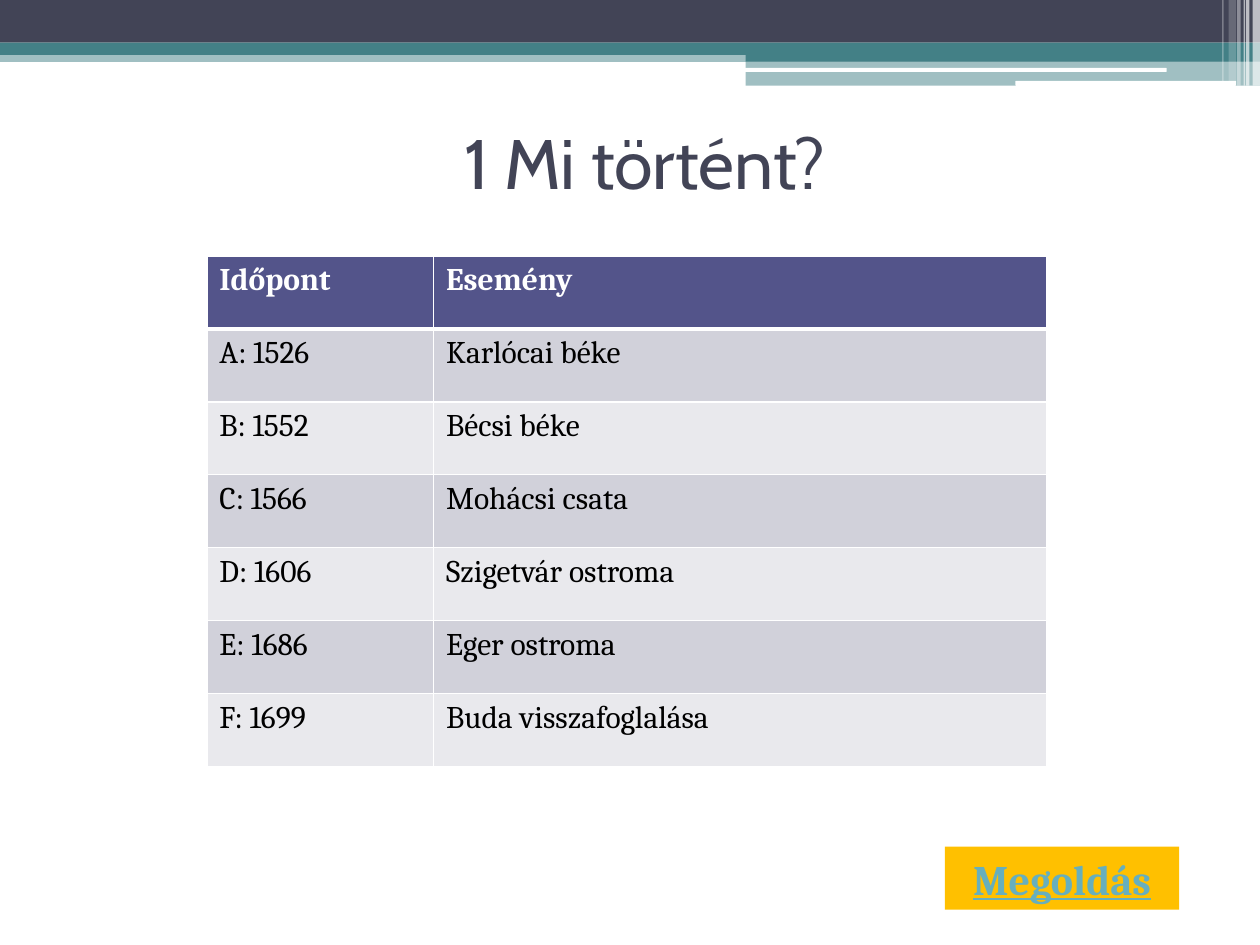
from lxml import etree
from pptx import Presentation
from pptx.dml.color import RGBColor
from pptx.enum.shapes import MSO_SHAPE
from pptx.enum.text import MSO_ANCHOR, PP_ALIGN
from pptx.oxml.ns import qn
from pptx.util import Cm, Pt

RECT, ROUND = MSO_SHAPE.RECTANGLE, MSO_SHAPE.ROUNDED_RECTANGLE
CENTER, LEFT = PP_ALIGN.CENTER, PP_ALIGN.LEFT
MIDDLE = MSO_ANCHOR.MIDDLE

COLORS = {
    "white": "FFFFFF", "black": "000000", "navy": "424456", "teal": "438086",
    "header": "53548A", "odd": "D1D1DA", "even": "E9E9ED",
    "amber": "FFC000", "link": "67AFBD",
}

BANDS = [
    (RECT, (0, 1.02, 25.4, 0.23), "teal", 50),
    (RECT, (0, 0, 25.4, 0.86), "navy", 100),
    (RECT, (0, 0.86, 25.4, 0.25), "teal", 100),
    (RECT, (15.03, 0.99, 10.37, 0.25), "teal", 100),
    (RECT, (15.03, 1.23, 10.37, 0.5), "teal", 50),
    (ROUND, (15.01, 1.37, 8.51, 0.08), "white", 100),
    (ROUND, (20.47, 1.63, 4.45, 0.1), "white", 100),
]

STRIPES = [
    (25.25, 0.15, 1.73, 65), (25.12, 0.07, 1.73, 65), (25.07, 0.03, 1.73, 60),
    (24.94, 0.07, 1.73, 40), (24.77, 0.15, 1.63, 20), (24.64, 0.03, 1.63, 30),
]

ROWS = [
    ("Időpont", "Esemény"),
    ("A: 1526", "Karlócai béke"),
    ("B: 1552", "Bécsi béke"),
    ("C: 1566", "Mohácsi csata"),
    ("D: 1606", "Szigetvár ostroma"),
    ("E: 1686", "Eger ostroma"),
    ("F: 1699", "Buda visszafoglalása"),
]

TITLE = {"name": "Cabin", "size": Pt(40)}
BUTTON = {"name": "Cambria", "size": Pt(24), "bold": True, "underline": True}
HEADER = {"name": "Cambria", "size": Pt(18), "bold": True}
BODY = {"name": "Cambria", "size": Pt(18), "bold": False}


def rgb(color):
    return RGBColor.from_string(COLORS[color])


def write(tf, text, fmt, color, align=LEFT):
    p = tf.paragraphs[0]
    p.alignment = align
    r = p.add_run()
    r.text = text
    for key, value in fmt.items():
        setattr(r.font, key, value)
    r.font.color.rgb = rgb(color)


def add_block(s, kind, box, color, opacity=100):
    sp = s.shapes.add_shape(kind, *map(Cm, box))
    sp.shadow.inherit = False
    sp.line.fill.background()
    sp.fill.solid()
    sp.fill.fore_color.rgb = rgb(color)
    if opacity < 100:
        clr = sp.fill._xPr.find(qn("a:solidFill"))[0]
        etree.SubElement(clr, qn("a:alpha"), val=str(opacity * 1000))
    return sp


def add_title(s, text):
    sp = s.shapes.add_textbox(Cm(1.57), Cm(1.78), Cm(22.86), Cm(2.97))
    tf = sp.text_frame
    tf.word_wrap = True
    tf.vertical_anchor = MIDDLE
    write(tf, text, TITLE, "navy", CENTER)


def add_button(s, text):
    sp = add_block(s, RECT, (19.05, 17.07, 4.72, 1.27), "amber")
    tf = sp.text_frame
    tf.word_wrap = False
    tf.vertical_anchor = MIDDLE
    write(tf, text, BUTTON, "link", CENTER)


def add_borders(cell, bottom):
    tcPr = cell._tc.get_or_add_tcPr()
    for side, width in (("L", 1), ("R", 1), ("T", 1), ("B", bottom)):
        ln = etree.SubElement(tcPr, qn(f"a:ln{side}"), w=str(Pt(width)))
        fill = etree.SubElement(ln, qn("a:solidFill"))
        etree.SubElement(fill, qn("a:srgbClr"), val=COLORS["white"])


def add_events(s):
    widths, height = (4.57, 12.37), 1.47
    box = (4.17, 5.16, sum(widths), height * len(ROWS))
    table = s.shapes.add_table(len(ROWS), len(widths), *map(Cm, box)).table
    for col, width in zip(table.columns, widths):
        col.width = Cm(width)
    for i, texts in enumerate(ROWS):
        table.rows[i].height = Cm(height)
        fmt, color, fill = BODY, "black", "odd" if i % 2 else "even"
        if i == 0:
            fmt, color, fill = HEADER, "white", "header"
        for j, text in enumerate(texts):
            cell = table.cell(i, j)
            add_borders(cell, 1 if i else 3)
            cell.fill.solid()
            cell.fill.fore_color.rgb = rgb(fill)
            write(cell.text_frame, text, fmt, color)


def main():
    prs = Presentation()
    prs.slide_width, prs.slide_height = Cm(25.4), Cm(19.05)
    s = prs.slides.add_slide(prs.slide_layouts[6])
    for band in BANDS:
        add_block(s, *band)
    for left, width, height, opacity in STRIPES:
        add_block(s, RECT, (left, 0, width, height), "white", opacity)
    add_title(s, "1 Mi történt?")
    add_button(s, "Megoldás")
    add_events(s)
    prs.save("out.pptx")


if __name__ == "__main__":
    main()
